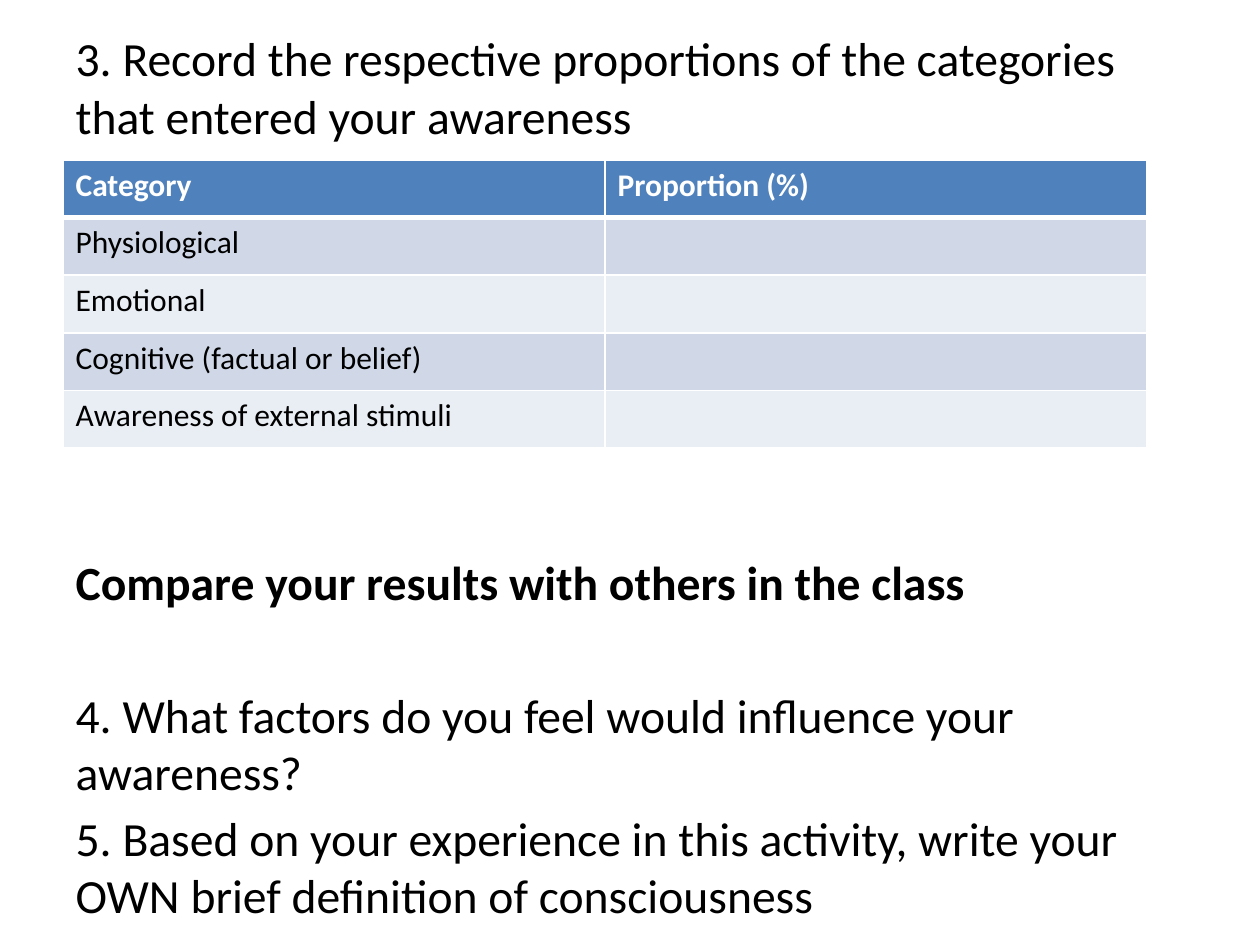
from dataclasses import dataclass

import pptx
import pptx.dml.color
import pptx.enum.text
import pptx.oxml
import pptx.oxml.ns
import pptx.util
from lxml import etree

EMU_PER_PX = 914400 / 126
A = pptx.oxml.ns.nsdecls("a")


def px(n):
    return pptx.util.Emu(round(n * EMU_PER_PX))


@dataclass(frozen=True)
class Theme:
    font: str = "Calibri"
    text: str = "000000"
    white: str = "FFFFFF"
    header: str = "4F81BD"
    bands: tuple = ("D0D8E8", "E9EDF4")
    body_size: float = 27.2
    table_size: float = 18
    border: int = 1
    header_border: int = 3


class Deck:
    def __init__(self, theme):
        self.theme = theme
        self.prs = pptx.Presentation()
        self.prs.slide_width, self.prs.slide_height = px(1260), px(945)
        self.s = None

    def slide(self):
        # Title and Content layout, used for its body only
        self.s = self.prs.slides.add_slide(self.prs.slide_layouts[1])
        title = self.s.shapes.title._element
        title.getparent().remove(title)

    def run(self, p, text, size, color, bold=False):
        r = p.add_run()
        r.text = text
        r.font.name = self.theme.font
        r.font.size = pptx.util.Pt(size)
        r.font.bold = bold
        r.font.color.rgb = pptx.dml.color.RGBColor.from_string(color)

    def body(self, x, y, w, h, paragraphs):
        sp = self.s.placeholders[1]
        sp.left, sp.top, sp.width, sp.height = px(x), px(y), px(w), px(h)
        tf = sp.text_frame
        tf.word_wrap = True
        tf.auto_size = pptx.enum.text.MSO_AUTO_SIZE.NONE
        tf.vertical_anchor = pptx.enum.text.MSO_ANCHOR.TOP
        for i, (text, before, bold) in enumerate(paragraphs):
            p = tf.add_paragraph() if i else tf.paragraphs[0]
            p.space_before = pptx.util.Pt(before)
            pPr = p._p.get_or_add_pPr()
            pPr.set("marL", "0")
            pPr.set("indent", "0")
            etree.SubElement(pPr, pptx.oxml.ns.qn("a:buNone"))
            self.run(p, text, self.theme.body_size, self.theme.text, bold)

    def borders(self, cell, top, bottom):
        side = self.theme.border
        tcPr = cell._tc.get_or_add_tcPr()
        for tag, width in (("lnL", side), ("lnR", side), ("lnT", top), ("lnB", bottom)):
            tcPr.append(pptx.oxml.parse_xml(
                f'<a:{tag} {A} w="{pptx.util.Pt(width)}"><a:solidFill>'
                f'<a:srgbClr val="{self.theme.white}"/></a:solidFill></a:{tag}>'))

    def table(self, x, y, w, h, rows):
        t = self.theme
        tbl = self.s.shapes.add_table(
            len(rows), len(rows[0]), px(x), px(y), px(w), px(h)).table
        for i, row in enumerate(rows):
            head = i == 0
            fill = t.header if head else t.bands[(i - 1) % 2]
            for j, text in enumerate(row):
                cell = tbl.cell(i, j)
                self.borders(cell,
                             t.header_border if i == 1 else t.border,
                             t.header_border if head else t.border)
                cell.fill.solid()
                cell.fill.fore_color.rgb = pptx.dml.color.RGBColor.from_string(fill)
                if text:
                    self.run(cell.text_frame.paragraphs[0], text, t.table_size,
                             t.white if head else t.text, head)


def main():
    d = Deck(Theme())
    d.slide()

    # Instructions: text, space before in points, bold
    d.body(63, 23, 1134, 793, [
        ("3. Record the respective proportions of the categories "
         "that entered your awareness", 0, False),
        ("Compare your results with others in the class", 234, True),
        ("4. What factors do you feel would influence your awareness?", 43, False),
        ("5. Based on your experience in this activity, write your "
         "OWN brief definition of consciousness", 5, False),
    ])

    # Recording table
    d.table(63, 160, 1084, 288, [
        ("Category", "Proportion (%)"),
        ("Physiological", ""),
        ("Emotional", ""),
        ("Cognitive (factual or belief)", ""),
        ("Awareness of external stimuli", ""),
    ])

    d.prs.save("out.pptx")


if __name__ == "__main__":
    main()
